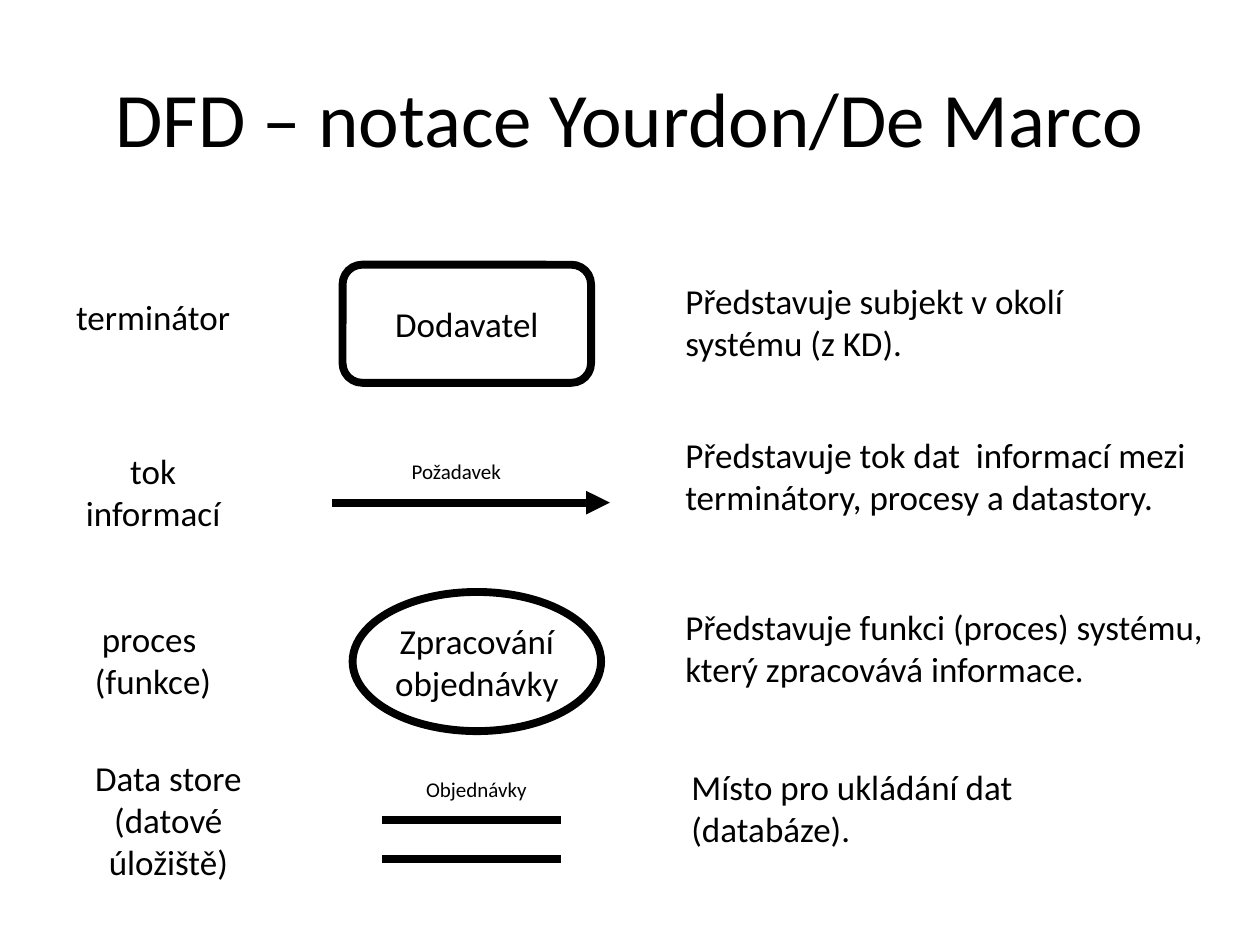
from lxml.etree import SubElement
from pptx import Presentation
from pptx.dml.color import RGBColor
from pptx.enum.shapes import MSO_CONNECTOR as Connector, MSO_SHAPE as Shape
from pptx.enum.text import MSO_ANCHOR as Anchor, MSO_AUTO_SIZE as AutoSize, PP_ALIGN as Align
from pptx.oxml.ns import qn
from pptx.util import Pt

BLACK = RGBColor(0x00, 0x00, 0x00)
WHITE = RGBColor(0xFF, 0xFF, 0xFF)
FONT = "Calibri"
LINE_WIDTH = 4.5
TITLE_ONLY = 5

NAME_LEFT, NAME_WIDTH = 28, 119
NOTE_LEFT = 384.5

# text, left, top, height; a vertical tab is a line break
NAMES = [
    ("terminátor", NAME_LEFT, 165.5, 34),
    ("tok\vinformací", NAME_LEFT, 253.5, 57),
    ("proces \v(funkce)", NAME_LEFT, 349.5, 62.5),
    ("Data store\v(datové\vúložiště)", 36.75, 428.5, 73.5),
]
# text, left, top, width, height
NOTES = [
    ("Představuje subjekt v okolí\nsystému (z KD).", NOTE_LEFT, 156, 273, 55.5),
    ("Představuje tok dat  informací mezi terminátory, procesy a datastory.",
     NOTE_LEFT, 244, 312, 56),
    ("Představuje funkci (proces) systému, který zpracovává informace.",
     NOTE_LEFT, 342.25, 312, 79),
    ("Místo pro ukládání dat (databáze).", 388, 434, 251.5, 55.5),
]
SYMBOLS = [
    (Shape.FLOWCHART_ALTERNATE_PROCESS, "Dodavatel", 195.75, 151.25, 142, 67.5),
    (Shape.FLOWCHART_CONNECTOR, "Zpracování\vobjednávky", 201.5, 338.25, 142, 79.5),
]
# text, left, top
LABELS = [("Požadavek", 218.25, 258.5), ("Objednávky", 229.75, 440)]


def write_text(shape, text, size=20, align=Align.CENTER, **frame_format):
    frame = shape.text_frame
    frame.text = text
    for name, value in frame_format.items():
        setattr(frame, name, value)
    font_format = {"name": FONT, "size": Pt(size)}
    for paragraph in frame.paragraphs:
        paragraph.alignment = align
        for run in paragraph.runs:
            for name, value in font_format.items():
                setattr(run.font, name, value)
            run.font.color.rgb = BLACK


def add_text(slide, text, left, top, width, height, **text_format):
    box = slide.shapes.add_textbox(Pt(left), Pt(top), Pt(width), Pt(height))
    write_text(box, text, word_wrap=True, **text_format)


def add_symbol(slide, kind, text, left, top, width, height):
    symbol = slide.shapes.add_shape(kind, Pt(left), Pt(top), Pt(width), Pt(height))
    symbol.shadow.inherit = False
    symbol.fill.background()
    symbol.line.color.rgb = BLACK
    symbol.line.width = Pt(LINE_WIDTH)
    write_text(symbol, text, word_wrap=False, vertical_anchor=Anchor.MIDDLE)


def add_label(slide, text, left, top):
    """Add the small white caption that stands above a line symbol."""
    label = slide.shapes.add_shape(Shape.RECTANGLE, Pt(left), Pt(top), Pt(85), Pt(21.75))
    label.shadow.inherit = False
    label.fill.solid()
    label.fill.fore_color.rgb = WHITE
    label.line.fill.background()
    write_text(label, text, size=12, word_wrap=True, vertical_anchor=Anchor.TOP,
               auto_size=AutoSize.SHAPE_TO_FIT_TEXT)


def add_line(shapes, left, right, y, arrow=False):
    line = shapes.add_connector(Connector.STRAIGHT, Pt(left), Pt(y), Pt(right), Pt(y))
    line.line.color.rgb = BLACK
    line.line.width = Pt(LINE_WIDTH)
    if arrow:
        SubElement(line.line._get_or_add_ln(), qn("a:tailEnd"), type="triangle")
    SubElement(line._element.spPr, qn("a:effectLst"))


def add_title(slide, text):
    title = slide.shapes.title
    place = {"left": 36, "top": 21.6, "width": 648, "height": 90}
    for name, value in place.items():
        setattr(title, name, Pt(value))
    write_text(title, text, size=44, vertical_anchor=Anchor.MIDDLE)


def main():
    presentation = Presentation()
    presentation.slide_width, presentation.slide_height = Pt(720), Pt(540)
    slide = presentation.slides.add_slide(presentation.slide_layouts[TITLE_ONLY])

    add_title(slide, "DFD – notace Yourdon/De Marco")
    for text, left, top, height in NAMES:
        add_text(slide, text, left, top, NAME_WIDTH, height)
    for symbol in SYMBOLS:
        add_symbol(slide, *symbol)
    add_line(slide.shapes, 190, 348.5, 287.25, arrow=True)
    data_store = slide.shapes.add_group_shape()
    for y in (468.75, 491):
        add_line(data_store.shapes, 218.25, 320.5, y)
    for label in LABELS:
        add_label(slide, *label)
    for note in NOTES:
        add_text(slide, *note, align=Align.LEFT, auto_size=AutoSize.SHAPE_TO_FIT_TEXT)

    presentation.save("out.pptx")


if __name__ == "__main__":
    main()
